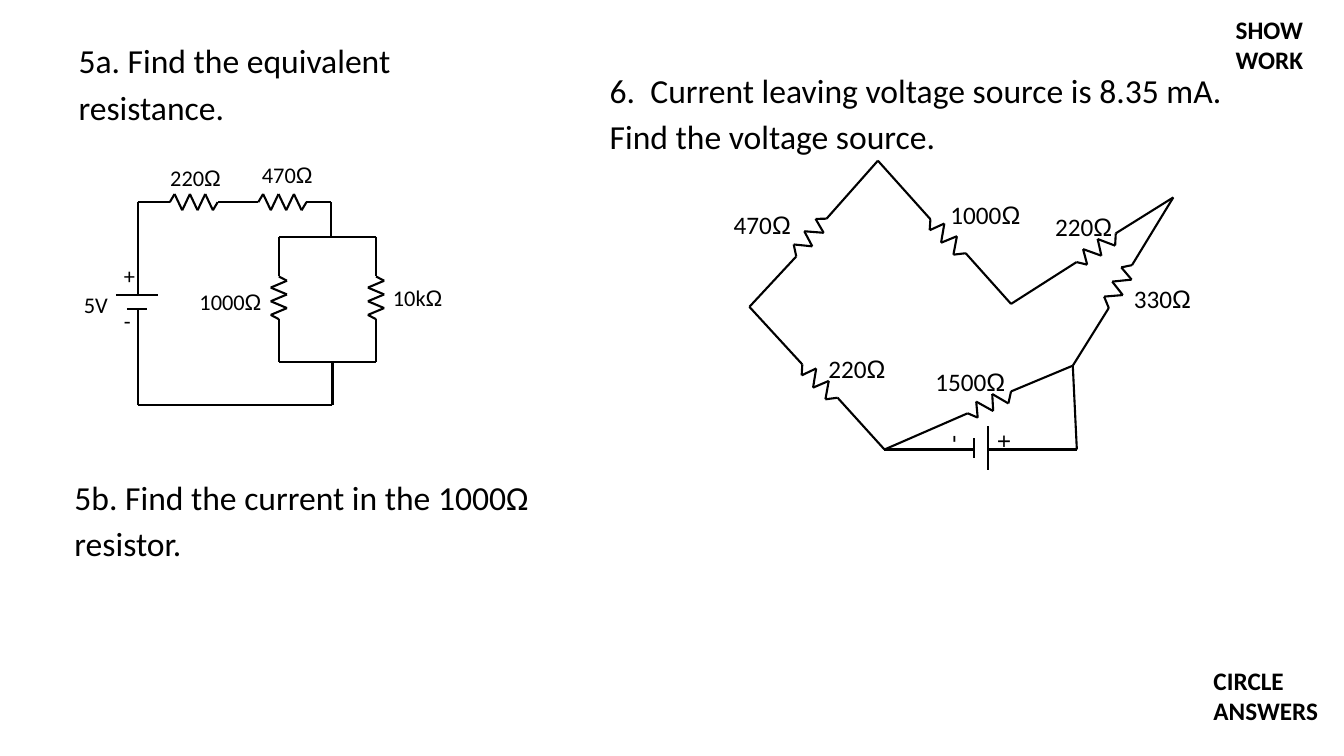
from itertools import pairwise
from math import hypot

from lxml.etree import SubElement
from pptx import Presentation
from pptx.dml.color import RGBColor
from pptx.enum.shapes import MSO_CONNECTOR as Connector
from pptx.enum.text import MSO_AUTO_SIZE as AutoSize, PP_ALIGN as Align
from pptx.oxml.ns import qn
from pptx.util import Pt

BLACK = RGBColor(0, 0, 0)

# Peaks of a resistor: share of its length, offset to the left of its direction
STRAIGHT = [(0.1 + 0.16 * i, 5.8 * (-1) ** i) for i in range(6)]
SLANTED = [(0.16, 6.8), (0.37, -4.4), (0.51, 6.8), (0.735, -4.7), (0.855, 6)]

SPACED = {"line_spacing": 1.15, "space_after": Pt(10)}


def set_values(target, values):
    for name, value in values.items():
        setattr(target, name, value)


class Worksheet:
    """Style and current slide; all lengths are in points."""

    font_name = "Calibri"
    symbol_font = "Arial"
    line_width = 1.5
    color = BLACK

    def __init__(self, page):
        self.shapes = page.shapes

    def wire(self, *points):
        for start, end in pairwise(points):
            line = self.shapes.add_connector(
                Connector.STRAIGHT, *(Pt(v) for v in (*start, *end)))
            line.line.width = Pt(self.line_width)
            line.line.color.rgb = self.color
            SubElement(line._element.spPr, qn("a:effectLst"))

    def resistor(self, start, end, peaks):
        dx, dy = end[0] - start[0], end[1] - start[1]
        length = hypot(dx, dy)
        zigzag = [(start[0] + share * dx + offset * dy / length,
                   start[1] + share * dy - offset * dx / length)
                  for share, offset in peaks]
        self.wire(start, *zigzag, end)

    def branch(self, corner, start, end, far_corner, peaks):
        self.wire(corner, start)
        self.resistor(start, end, peaks)
        self.wire(end, far_corner)

    def text(self, frame, lines, size, wrap=False, grow=True, rotation=0,
             bold=None, layout=None):
        box = self.shapes.add_textbox(*(Pt(v) for v in frame))
        box.rotation = rotation
        set_values(box.text_frame, {
            "word_wrap": wrap,
            "auto_size": AutoSize.SHAPE_TO_FIT_TEXT if grow else AutoSize.NONE})
        for index, spans in enumerate(lines):
            frame_text = box.text_frame
            para = frame_text.add_paragraph() if index else frame_text.paragraphs[0]
            set_values(para, layout or {})
            for content, font_name in spans:
                span = para.add_run()
                span.text = content
                set_values(span.font, {"name": font_name, "size": Pt(size), "bold": bold})
                span.font.color.rgb = self.color

    def lines(self, frame, contents, size, **options):
        self.text(frame, [[(content, self.font_name)] for content in contents],
                  size, **options)

    def question(self, frame, content):
        self.lines(frame, [content], 24, wrap=True, grow=False, layout=SPACED)

    def ohms(self, frame, value, size):
        self.text(frame, [[(value, self.font_name), ("Ω", self.symbol_font)]], size)


def draw_series_parallel(sheet):
    # Battery
    left, plus_y, minus_y = 98.4, 211, 221
    sheet.wire((82.8, plus_y), (113, plus_y))
    sheet.wire((90.7, minus_y), (105.1, minus_y))
    sheet.lines((81.4, 180.7, 22.3, 61.9), ["+", "-"], 16, layout=SPACED)
    sheet.lines((36.7, 201.6, 63.4, 30.2), ["5V"], 16, wrap=True, grow=False,
                layout={**SPACED, "alignment": Align.CENTER})

    # Top row in series
    top, row_end = 144.4, 236.2
    sheet.wire((left, plus_y), (left, top), (121.3, top))
    sheet.resistor((121.3, top), (155.5, top), STRAIGHT)
    sheet.wire((155.5, top), (184.5, top))
    sheet.resistor((184.5, top), (218.9, top), STRAIGHT)
    sheet.wire((218.9, top), (row_end, top), (row_end, 169))

    # Parallel pair
    pair_top, pair_bottom = 169, 258.4
    branches = (199.2, 268.6)
    for y in (pair_top, pair_bottom):
        sheet.wire(*((x, y) for x in branches))
    for x in branches:
        sheet.branch((x, pair_top), (x, 197.5), (x, 228), (x, pair_bottom), STRAIGHT)

    # Return path
    bottom = 289.4
    sheet.wire((237.5, pair_bottom), (237.5, bottom), (left, bottom), (left, minus_y))

    for x, y, width, value in [(180, 111.6, 51.8, "470"), (114.5, 113.8, 51.8, "220"),
                               (135.4, 202.3, 59.8, "1000"), (273.6, 199.4, 50.4, "10k")]:
        sheet.ohms((x, y, width, 26.6), value, 16)


def draw_slanted_loop(sheet):
    # Corners of the loop
    west, north, dip = (535.3, 219.2), (627.1, 114.8), (722.2, 217.1)
    east, joint, south = (838.1, 141), (766.3, 261.2), (631.8, 321.1)

    # Corner, both ends of the resistor, next corner, label
    for corner, start, end, far_corner, label in [
        (west, (568.8, 183.2), (590.4, 156.2), north, (517, 146.2, 56.2, "470")),
        (dip, (689.8, 180.9), (664.6, 156.6), north, (671.8, 139, 65.5, "1000")),
        (east, (797, 166.7), (769, 187.2), dip, (746.6, 147.6, 56.2, "220")),
        (joint, (792, 220), (808.6, 189.4), east, (802.8, 198.7, 56.2, "330")),
        (south, (598.3, 284.1), (573.1, 260.3), west, (584.6, 249.1, 56.2, "220")),
        (joint, (722.2, 279.6), (691.2, 295.2), south, (661, 257.8, 65.5, "1500")),
    ]:
        sheet.branch(corner, start, end, far_corner, SLANTED)
        x, y, width, value = label
        sheet.ohms((x, y, width, 28.8), value, 18)

    # Battery
    level, minus_x, plus_x = south[1], 695.6, 705.6
    sheet.wire(south, (minus_x, level))
    sheet.wire((minus_x, 313.2), (minus_x, 326.9))
    sheet.wire((plus_x, 304.6), (plus_x, 335.5))
    sheet.wire((plus_x, level), (769.2, level), joint)
    sheet.lines((691.2, 283, 23.8, 66.2), ["+", "-"], 18, rotation=90, layout=SPACED)


def main():
    deck = Presentation()
    deck.slide_width, deck.slide_height = Pt(960), Pt(540)
    sheet = Worksheet(deck.slides.add_slide(deck.slide_layouts[6]))

    # Circuits
    draw_series_parallel(sheet)
    draw_slanted_loop(sheet)

    # Questions
    sheet.question((49, 20.9, 339.8, 74.9), "5a. Find the equivalent resistance.")
    sheet.question((46.1, 332.6, 339.8, 74.9),
                   "5b. Find the current in the 1000Ω resistor.")
    sheet.question((428.4, 41.8, 464.4, 56.9),
                   "6.  Current leaving voltage source is 8.35 mA. Find the voltage source.")

    # Reminders
    sheet.lines((875.5, 6.5, 63.4, 51.1), ["SHOW", "WORK"], 18, bold=True)
    sheet.lines((859.7, 471.6, 90, 51.1), ["CIRCLE", "ANSWERS"], 18, bold=True)

    deck.save("out.pptx")


if __name__ == "__main__":
    main()
